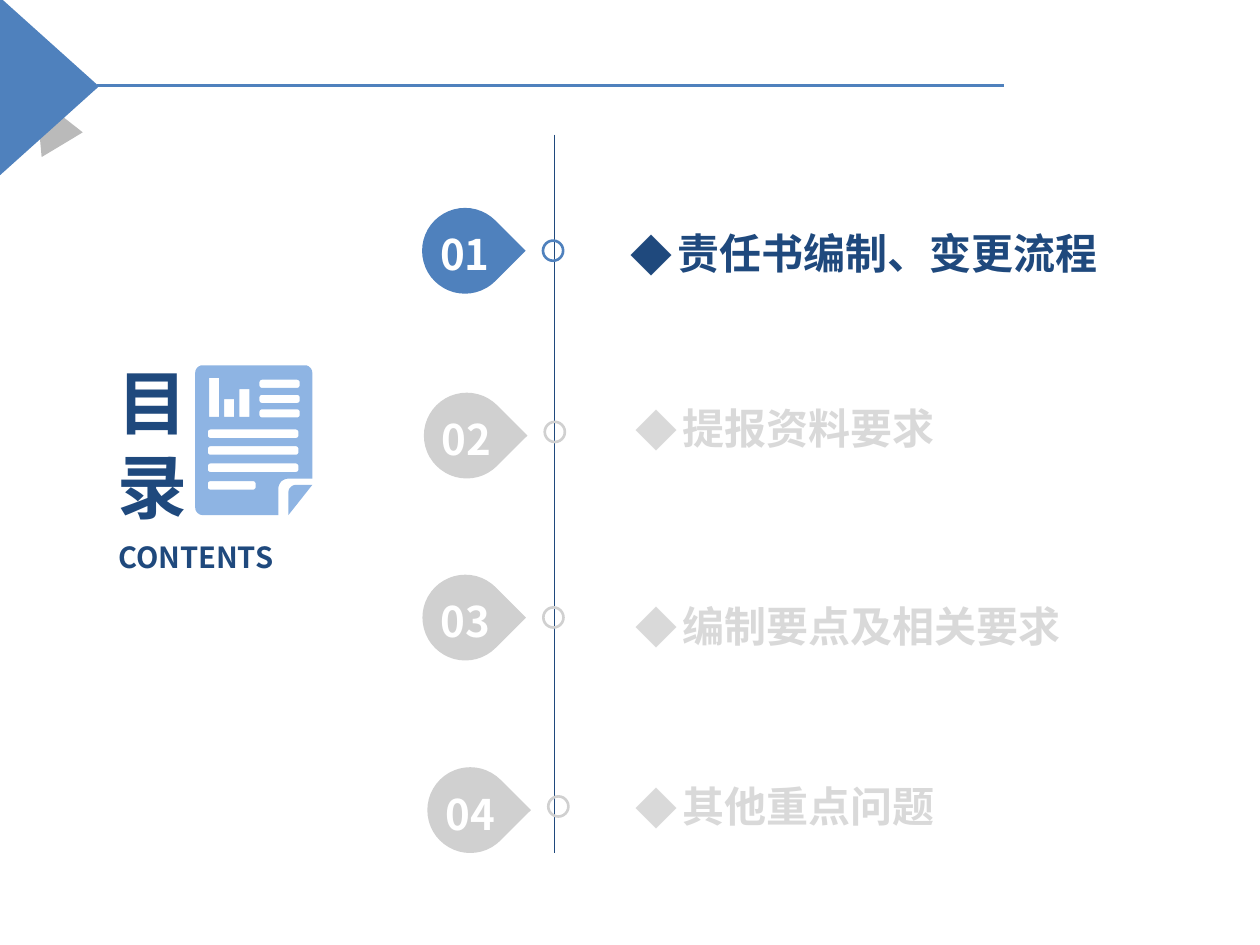
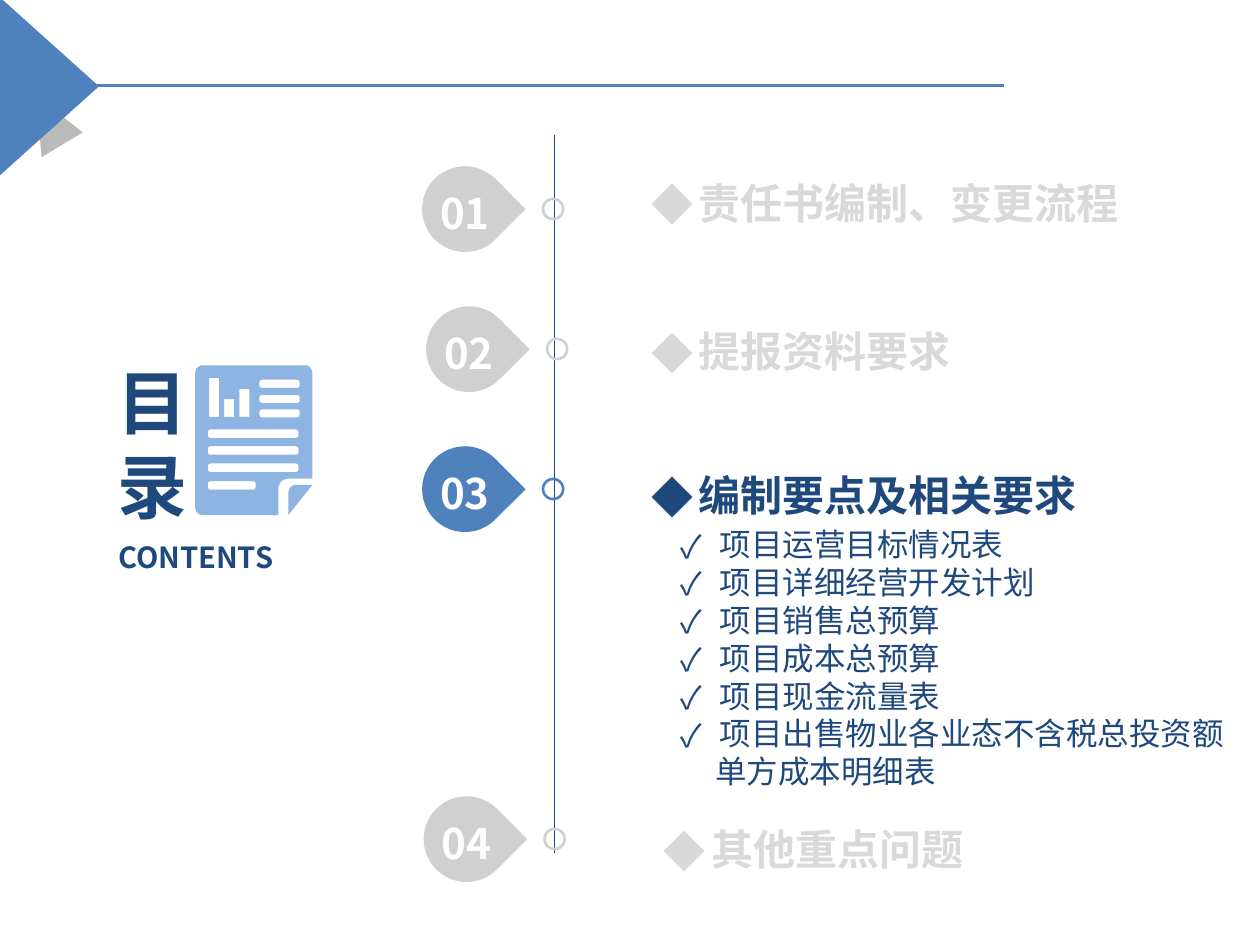
"""Build two table-of-contents slides, each highlighting one chapter."""
import math
from dataclasses import dataclass

import lxml.etree
import pptx
import pptx.dml.color
import pptx.enum.shapes
import pptx.enum.text
import pptx.oxml.ns
import pptx.util

Pt = pptx.util.Pt
Shape = pptx.enum.shapes.MSO_SHAPE
Align = pptx.enum.text.PP_ALIGN
Anchor = pptx.enum.text.MSO_ANCHOR
qn = pptx.oxml.ns.qn

FONT = "Noto Sans CJK SC"
COLORS = {
    "white": "FFFFFF",
    "blue": "4F81BD",
    "navy": "1F497D",
    "sky": "8EB4E3",
    "shade": "404040",
    "marker": "D0D0D0",
    "muted": "D9D9D9",
}
LINE_HEIGHT = 1.2
BASELINE_SHIFT = 0.08
DROP_SIZE = 49
RING_SIZE = 11.5
LABEL_HEIGHT = 34

CHAPTERS = ["责任书编制、变更流程", "提报资料要求", "编制要点及相关要求", "其他重点问题"]
BUDGET_TABLES = [
    "项目运营目标情况表",
    "项目详细经营开发计划",
    "项目销售总预算",
    "项目成本总预算",
    "项目现金流量表",
    "项目出售物业各业态不含税总投资额",
]
BUDGET_CONTINUATION = "单方成本明细表"


@dataclass(frozen=True)
class Stop:
    """Place of one chapter on the timeline, in points."""

    drop_left: float
    drop_top: float
    label_left: float
    label_bottom: float
    ring_lift: float = 0


OVERVIEW_STOPS = [
    Stop(241.2, 118.8, 360, 157),
    Stop(242.2, 224.4, 363, 257, 2),
    Stop(241.4, 328.4, 363, 370),
    Stop(244.2, 438.4, 363, 473, 2),
]
DETAIL_STOPS = [
    Stop(241.2, 95, 372.2, 128.2),
    Stop(243.5, 175, 372.2, 213.1),
    Stop(241.2, 255, 372.2, 295.2),
    Stop(242.1, 455, 379.4, 497.5),
]


def rgb(name: str) -> pptx.dml.color.RGBColor:
    """Return a palette colour."""
    return pptx.dml.color.RGBColor.from_string(COLORS[name])


def write(box, text: str, *, size: float, color: str, bold: bool = True, align=Align.LEFT,
          anchor=Anchor.TOP, bullet: str = "", indent: float = 0, left_indent: float = 0,
          append: bool = False) -> None:
    """Write one formatted paragraph into a box."""
    frame = box.text_frame
    if not append:
        frame.word_wrap = True
        frame.auto_size = pptx.enum.text.MSO_AUTO_SIZE.NONE
        frame.vertical_anchor = anchor
        frame.margin_left = frame.margin_right = frame.margin_top = frame.margin_bottom = 0
        box.top += Pt(size * BASELINE_SHIFT)
    para = frame.add_paragraph() if append else frame.paragraphs[0]
    para.alignment = align
    para.line_spacing = Pt(size * LINE_HEIGHT)
    para.space_before = para.space_after = Pt(0)
    properties = para._p.get_or_add_pPr()
    properties.set("marL", str(Pt(left_indent or indent)))
    properties.set("indent", str(-Pt(indent)))
    if bullet:
        lxml.etree.SubElement(properties, qn("a:buFont"), typeface=FONT)
        lxml.etree.SubElement(properties, qn("a:buChar"), char=bullet)
    span = para.add_run()
    span.text = text
    span.font.size = Pt(size)
    span.font.bold = bold
    span.font.name = FONT
    span.font.color.rgb = rgb(color)
    lxml.etree.SubElement(span._r.get_or_add_rPr(), qn("a:ea"), typeface=FONT)


def add_box(page, left: float, top: float, width: float, height: float):
    """Add an empty text box."""
    return page.shapes.add_textbox(Pt(left), Pt(top), Pt(width), Pt(height))


def add_figure(page, kind, left: float, top: float, width: float, height: float, *,
               fill: str = "", line: str = "", rotation: float = 0):
    """Add a flat preset shape."""
    figure = page.shapes.add_shape(kind, Pt(left), Pt(top), Pt(width), Pt(height))
    figure.shadow.inherit = False
    figure.rotation = rotation
    if fill:
        figure.fill.solid()
        figure.fill.fore_color.rgb = rgb(fill)
    else:
        figure.fill.background()
    if line:
        figure.line.color.rgb = rgb(line)
        figure.line.width = Pt(1.5)
    else:
        figure.line.fill.background()
    return figure


def add_rule(page, start: tuple[float, float], end: tuple[float, float], *, color: str,
             width: float) -> None:
    """Add a straight line."""
    rule = page.shapes.add_connector(
        pptx.enum.shapes.MSO_CONNECTOR.STRAIGHT, *(Pt(value) for value in start + end))
    rule.line.color.rgb = rgb(color)
    rule.line.width = Pt(width)
    lxml.etree.SubElement(rule._element.spPr, qn("a:effectLst"))


def add_corner(page) -> None:
    """Draw the corner arrow, its shade and the header rule."""
    shade = add_figure(page, Shape.ISOSCELES_TRIANGLE, 13.7, 53.3, 27.4, 31.7,
                       fill="shade", rotation=329)
    shade.adjustments[0] = 0.56
    color = shade._element.spPr.find(qn("a:solidFill"))[0]
    lxml.etree.SubElement(color, qn("a:alpha"), val="36000")
    add_figure(page, Shape.ISOSCELES_TRIANGLE, -23, 20.9, 102.2, 56.9, fill="blue", rotation=90)
    add_rule(page, (55.4, 49), (573.8, 49), color="blue", width=2)


def arc(x: float, y: float, radius: float, start: int, end: int) -> list[tuple[float, float]]:
    """Return points on a quarter arc, angles in degrees clockwise."""
    angles = [math.radians(start + (end - start) * step / 6) for step in range(7)]
    return [(x + radius * math.cos(angle), y + radius * math.sin(angle)) for angle in angles]


def rounded(left: float, top: float, width: float, height: float,
            radius: float = 0) -> list[tuple[float, float]]:
    """Return the outline of a rounded rectangle."""
    right, bottom = left + width - radius, top + height - radius
    left, top = left + radius, top + radius
    return (arc(left, top, radius, 180, 270) + arc(right, top, radius, 270, 360)
            + arc(right, bottom, radius, 0, 90) + arc(left, bottom, radius, 90, 180))


def add_report_icon(page) -> None:
    """Draw the report sheet as one outline with cut-out bars and lines."""
    sheet = (arc(161, 296, 6, 180, 270) + arc(242, 296, 6, 270, 360) + [(248, 380)]
             + arc(229, 388, 8, 270, 180) + [(221, 409)] + arc(161, 403, 6, 90, 180))
    fold = arc(235, 391, 6, 180, 270) + [(248, 385), (229, 409)]
    bars = [rounded(left, top, 8, 331 - top) for left, top in ((166, 300), (178, 317), (190, 309))]
    short_lines = [rounded(206, top, 32, 6.5, 2) for top in (301.5, 313.5, 325)]
    long_lines = [rounded(165, top, width, 6.8, 2)
                  for top, width in ((341, 72), (354.3, 72), (368, 72), (382, 38))]
    builder = None
    for outline in [sheet, fold, *bars, *short_lines, *long_lines]:
        points = [(round(x * 10), round(y * 10)) for x, y in outline]
        if builder is None:
            builder = page.shapes.build_freeform(*points[0], scale=float(Pt(0.072)))
        else:
            builder.move_to(*points[0])
        builder.add_line_segments(points[1:], close=True)
    icon = builder.convert_to_shape()
    icon.shadow.inherit = False
    icon.fill.solid()
    icon.fill.fore_color.rgb = rgb("sky")
    icon.line.fill.background()


def add_heading(page) -> None:
    """Place the title, its subtitle and the report icon."""
    title = page.shapes.title
    title.left, title.top, title.width, title.height = Pt(65.6), Pt(202.3), Pt(43.2), Pt(99.4)
    write(title, "目录", size=40, color="navy", align=Align.CENTER)
    write(add_box(page, 67.7, 307.4, 110.9, 19.4), "CONTENTS", size=16.6, color="navy",
          align=Align.JUSTIFY, anchor=Anchor.MIDDLE)
    add_report_icon(page)


def add_stop(page, number: int, stop: Stop, active: bool) -> None:
    """Draw the ring, numbered drop and label of one chapter."""
    color = "blue" if active else "marker"
    left, top = stop.drop_left, stop.drop_top
    add_figure(page, Shape.OVAL, left + 69.1, top + 18.7 - stop.ring_lift, RING_SIZE, RING_SIZE,
               line=color)
    add_figure(page, Shape.TEAR, left, top, DROP_SIZE, DROP_SIZE, fill=color, rotation=45)
    write(add_box(page, left, top, DROP_SIZE, DROP_SIZE), f"{number:02}", size=24,
          color="white", align=Align.CENTER, anchor=Anchor.MIDDLE)
    label = add_box(page, stop.label_left, stop.label_bottom - LABEL_HEIGHT, 300, LABEL_HEIGHT)
    write(label, CHAPTERS[number - 1], size=24, color="navy" if active else "muted",
          anchor=Anchor.BOTTOM, bullet="◆", indent=27)


def add_budget_list(page) -> None:
    """List the tables of the third chapter."""
    box = add_box(page, 388.8, 298.8, 328, 152.6)
    for index, name in enumerate(BUDGET_TABLES):
        write(box, name, size=18, color="navy", bold=False, bullet="✓", indent=22.5,
              append=index > 0)
    write(box, BUDGET_CONTINUATION, size=18, color="navy", bold=False, left_indent=20,
          append=True)


def add_contents_page(deck, stops: list[Stop], current: int):
    """Add a contents slide with the current chapter highlighted."""
    page = deck.slides.add_slide(deck.slide_layouts[5])
    add_corner(page)
    add_heading(page)
    add_rule(page, (316.8, 77), (316.8, 487.4), color="navy", width=0.75)
    for number, stop in enumerate(stops, start=1):
        add_stop(page, number, stop, number == current)
    return page


def main() -> None:
    """Build and save the deck."""
    deck = pptx.Presentation()
    deck.slide_width, deck.slide_height = Pt(720), Pt(540)
    add_contents_page(deck, OVERVIEW_STOPS, current=1)
    add_budget_list(add_contents_page(deck, DETAIL_STOPS, current=3))
    deck.save("out.pptx")


if __name__ == "__main__":
    main()
